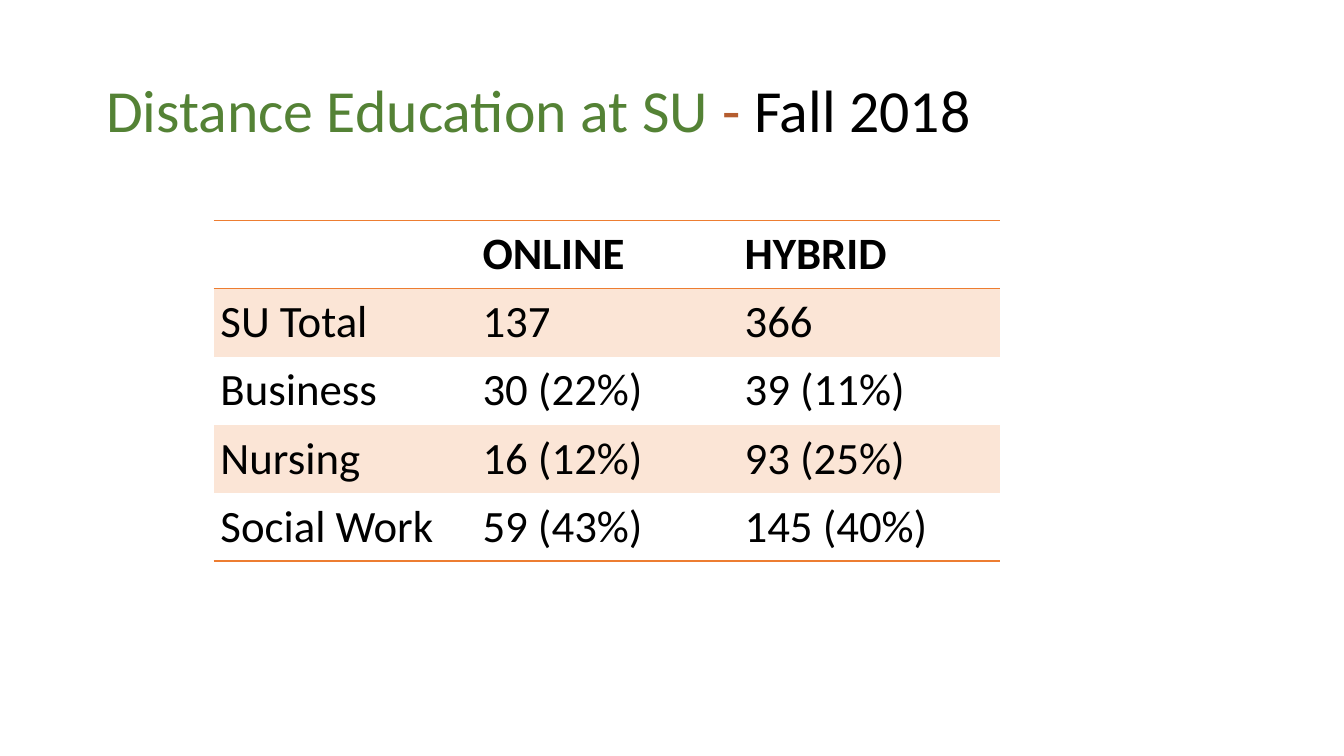
"""Build the distance education slide with its enrolment table."""
from lxml.etree import SubElement
from pptx import Presentation
from pptx.dml.color import RGBColor
from pptx.enum.text import MSO_ANCHOR, PP_ALIGN
from pptx.oxml.ns import qn
from pptx.util import Inches, Pt

GREEN = RGBColor(0x54, 0x82, 0x35)
RUST = RGBColor(0xB5, 0x5D, 0x2F)
BLACK = RGBColor(0, 0, 0)
ORANGE = RGBColor(0xED, 0x7D, 0x31)
PEACH = RGBColor(0xFB, 0xE5, 0xD6)

TITLE = [("Distance Education at SU ", GREEN), ("- ", RUST), ("Fall 2018", BLACK)]
ROWS = [
    ("", "ONLINE", "HYBRID"),
    ("SU Total", "137", "366"),
    ("Business", "30 (22%)", "39 (11%)"),
    ("Nursing", "16 (12%)", "93 (25%)"),
    ("Social Work", "59 (43%)", "145 (40%)"),
]
EDGES = {0: ("a:lnT", "a:lnB"), len(ROWS) - 1: ("a:lnB",)}
PAGE = Inches(10)
WIDE, HIGH = 1.95, 0.5
PLAIN = "{2D5ABB26-0587-4C30-8999-92F81FD0307C}"
PAD = {f"margin_{side}": Inches(0.05) for side in ("left", "right", "top", "bottom")}


def assign(item, **values):
    for name, value in values.items():
        setattr(item, name, value)


def style(font, size, color, bold=False):
    assign(font, name="Calibri", size=Pt(size), bold=bold)
    font.color.rgb = color


def rule(cell, edge):
    line = SubElement(cell._tc.get_or_add_tcPr(), qn(edge), w=str(Pt(1)))
    fill = SubElement(line, qn("a:solidFill"))
    SubElement(fill, qn("a:srgbClr"), val=str(ORANGE))


def add_title(slide):
    title = slide.shapes.title
    assign(title, left=Inches(0.69), top=Inches(0.3),
           width=Inches(7.61), height=Inches(1.09))
    assign(title.text_frame, vertical_anchor=MSO_ANCHOR.MIDDLE, word_wrap=True)
    para = title.text_frame.paragraphs[0]
    assign(para, alignment=PP_ALIGN.LEFT, line_spacing=0.9)
    for text, color in TITLE:
        run = para.add_run()
        run.text = text
        style(run.font, 32, color)


def add_grid(slide):
    count = len(ROWS[0])
    table = slide.shapes.add_table(
        len(ROWS), count, Inches(1.59), Inches(1.64),
        Inches(WIDE * count), Inches(HIGH * len(ROWS))).table
    assign(table, first_row=True, horz_banding=True)
    table._tbl.tblPr[0].text = PLAIN
    for r, row in enumerate(ROWS):
        for c, text in enumerate(row):
            cell = table.cell(r, c)
            assign(cell, text=text, **PAD)
            style(cell.text_frame.paragraphs[0].font, 24, BLACK, r == 0)
            for edge in EDGES.get(r, ()):
                rule(cell, edge)
            if r % 2:
                cell.fill.solid()
                cell.fill.fore_color.rgb = PEACH
            else:
                cell.fill.background()


def main():
    deck = Presentation()
    assign(deck, slide_width=PAGE, slide_height=PAGE * 9 // 16)
    slide = deck.slides.add_slide(deck.slide_layouts[5])
    add_title(slide)
    add_grid(slide)
    deck.save("out.pptx")


if __name__ == "__main__":
    main()
